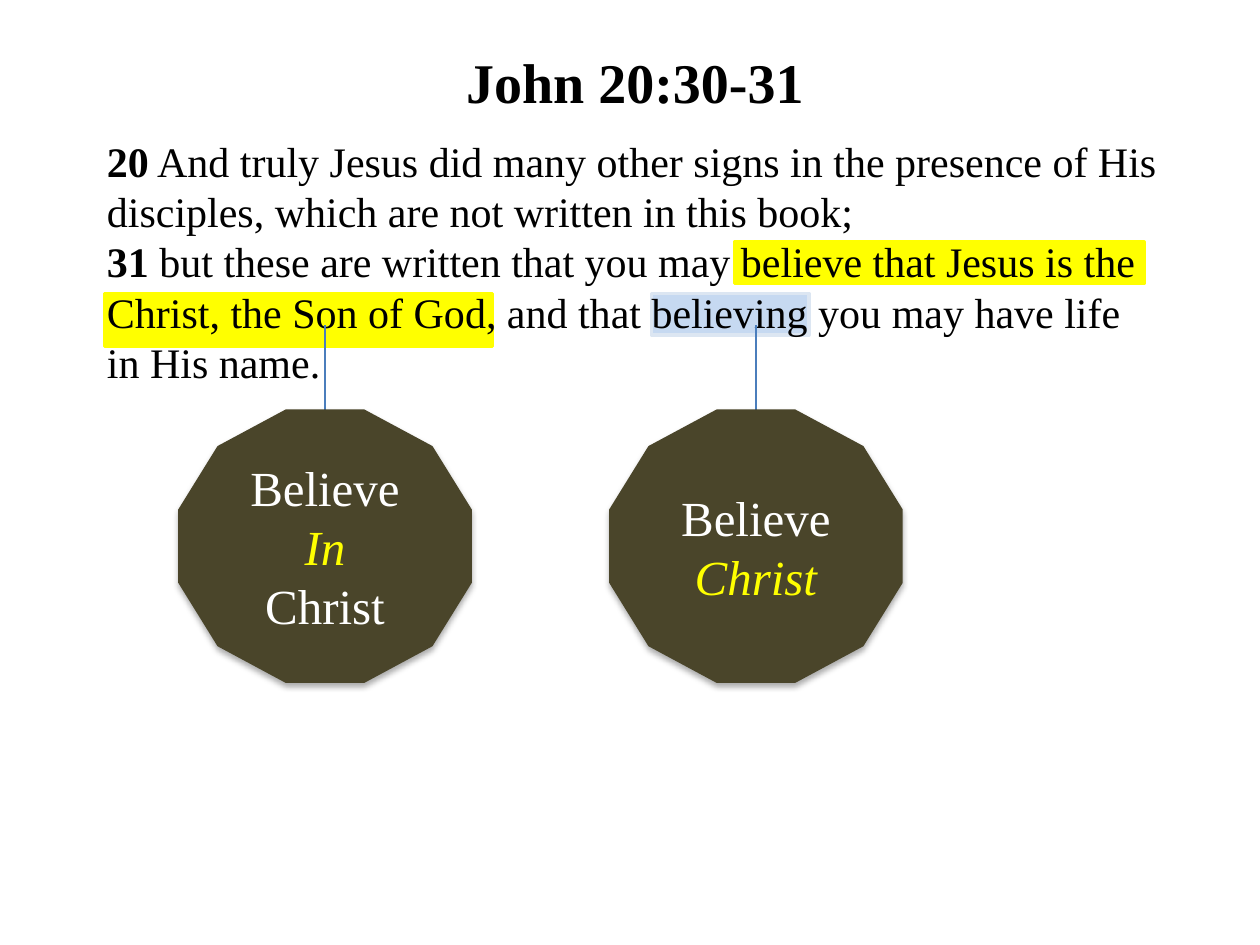
from lxml import etree
from pptx import Presentation
from pptx.dml.color import RGBColor
from pptx.enum import shapes, text
from pptx.oxml import ns
from pptx.util import Inches, Pt

COLORS = {
    "black": "000000",
    "white": "FFFFFF",
    "yellow": "FFFF00",
    "pale_blue": "C6D9F1",
    "pale_edge": "DCE6F2",
    "line_blue": "4B7EBC",
    "olive": "4A452A",
}
FONT = "Times New Roman"


def color(name):
    return RGBColor.from_string(COLORS[name])


def add_element(parent, tag, **attributes):
    element = etree.SubElement(parent, ns.qn(tag))
    for name, value in attributes.items():
        element.set(name, str(value))
    return element


class VerseSlide:
    def __init__(self, slide):
        self.slide = slide

    def style(self, paragraph, size, name="black", bold=False, italic=False):
        font = paragraph.font
        font.name, font.size = FONT, Pt(size)
        font.bold, font.italic = bold, italic
        font.color.rgb = color(name)

    def shape(self, kind, left, top, width, height, fill):
        shape = self.slide.shapes.add_shape(
            kind, Inches(left), Inches(top), Inches(width), Inches(height))
        shape.shadow.inherit = False
        shape.fill.solid()
        shape.fill.fore_color.rgb = color(fill)
        shape.line.fill.background()
        return shape

    def highlight(self, left, top, width, height, fill, edge):
        shape = self.shape(shapes.MSO_SHAPE.RECTANGLE, left, top, width, height, fill)
        shape.line.color.rgb = color(edge)
        shape.line.width = Pt(2)

    def passage(self, left, top, width, height, title, verses):
        box = self.slide.shapes.add_textbox(
            Inches(left), Inches(top), Inches(width), Inches(height))
        frame = box.text_frame
        frame.word_wrap = True
        frame.auto_size = text.MSO_AUTO_SIZE.SHAPE_TO_FIT_TEXT
        heading = frame.paragraphs[0]
        heading.text = title
        heading.alignment = text.PP_ALIGN.CENTER
        heading.space_after = Pt(11.5)
        self.style(heading, 32, bold=True)
        for number, words in verses:
            paragraph = frame.add_paragraph()
            self.style(paragraph, 24)
            run = paragraph.add_run()
            run.text = number
            run.font.bold = True
            paragraph.add_run().text = f" {words}"

    def pointer(self, x, top, bottom):
        line = self.slide.shapes.add_connector(
            shapes.MSO_CONNECTOR.STRAIGHT, Inches(x), Inches(top), Inches(x), Inches(bottom))
        line.line.color.rgb = color("line_blue")
        line.line.width = Pt(0.75)
        add_element(line._element.spPr, "a:effectLst")

    def badge(self, center, lines, emphasis):
        width = 2.33
        self.pointer(center, 2.58, 3.33)
        shape = self.shape(shapes.MSO_SHAPE.DODECAGON, center - width / 2, 3.25, width, 2.17, "olive")
        effects = shape._element.spPr.find(ns.qn("a:effectLst"))
        shadow = add_element(effects, "a:outerShdw", blurRad=Pt(3.5), dist=Pt(2.2),
                             dir=90 * 60000, rotWithShape=0)
        shade = add_element(shadow, "a:srgbClr", val=COLORS["black"])
        add_element(shade, "a:alpha", val=32000)
        frame = shape.text_frame
        frame.vertical_anchor = text.MSO_ANCHOR.MIDDLE
        for index, words in enumerate(lines):
            paragraph = frame.add_paragraph() if index else frame.paragraphs[0]
            paragraph.text = words
            paragraph.alignment = text.PP_ALIGN.CENTER
            stressed = index == emphasis
            self.style(paragraph, 28, "yellow" if stressed else "white", italic=stressed)


def main():
    presentation = Presentation()
    presentation.slide_width, presentation.slide_height = Inches(10), Inches(7.5)
    slide = VerseSlide(presentation.slides.add_slide(presentation.slide_layouts[6]))
    slide.highlight(5.17, 2.33, 1.25, 0.33, "pale_blue", "pale_edge")
    slide.highlight(0.83, 2.33, 3.08, 0.42, "yellow", "yellow")
    slide.highlight(5.83, 1.92, 3.25, 0.33, "yellow", "yellow")
    slide.passage(0.75, 0.33, 8.58, 2.83, "John 20:30-31", [
        ("20", "And truly Jesus did many other signs in the presence of His disciples, "
               "which are not written in this book;"),
        ("31", "but these are written that you may believe that Jesus is the Christ, "
               "the Son of God, and that believing you may have life in His name."),
    ])
    slide.badge(2.58, ["Believe", "In", "Christ"], 1)
    slide.badge(6, ["Believe", "Christ"], 1)
    presentation.save("out.pptx")


if __name__ == "__main__":
    main()
